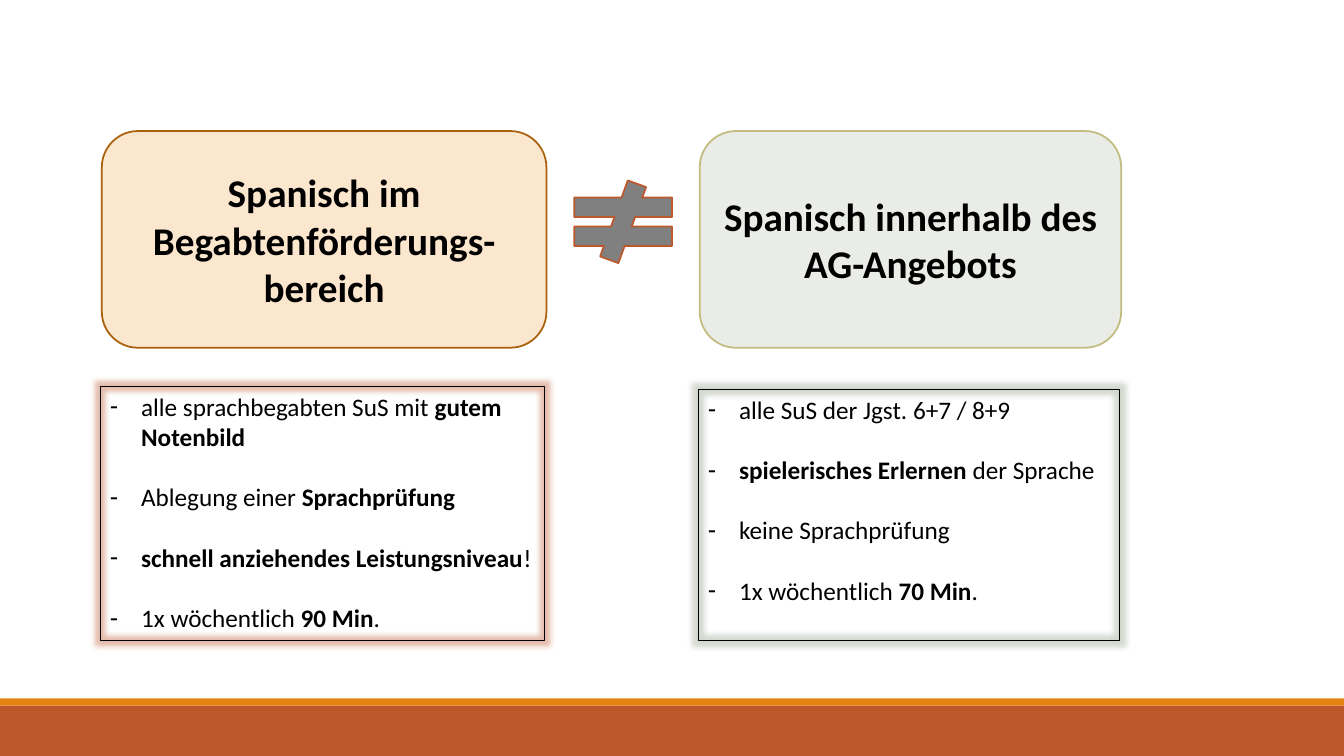
from lxml.etree import SubElement
from pptx import Presentation
from pptx.dml.color import RGBColor
from pptx.enum.shapes import MSO_SHAPE as SHP
from pptx.enum.text import MSO_ANCHOR as ANCHOR, MSO_AUTO_SIZE as AUTO, PP_ALIGN as ALIGN
from pptx.oxml.ns import qn
from pptx.util import Inches, Pt

COLORS = {
    "black": "000000", "rust": "BD582C", "orange": "E48312", "gray": "808080",
    "peach": "FBE6CE", "brown": "A9610D", "mist": "EAECE7", "olive": "C2BC80",
    "sage": "94A088",
}


class Deck:
    """Holds the style and the current slide."""

    def __init__(self, prs, font="Calibri"):
        self.font = font
        self.s = prs.slides.add_slide(prs.slide_layouts[3])
        title = self.s.shapes.title
        title.element.getparent().remove(title.element)

    def color(self, name):
        return RGBColor.from_string(COLORS[name])

    def run(self, p, text, size, bold=False):
        r = p.add_run()
        r.text = text
        r.font.name, r.font.size, r.font.bold = self.font, Pt(size), bold
        r.font.color.rgb = self.color("black")

    def shape(self, kind, box, fill, line=None):
        sp = self.s.shapes.add_shape(kind, *map(Inches, box))
        sp.shadow.inherit = False
        sp.fill.solid()
        sp.fill.fore_color.rgb = self.color(fill)
        if line:
            sp.line.color.rgb = self.color(line)
            sp.line.width = Pt(1.25)
        else:
            sp.line.fill.background()
        return sp

    def heading(self, box, text, fill, line):
        tf = self.shape(SHP.ROUNDED_RECTANGLE, box, fill, line).text_frame
        tf.word_wrap, tf.vertical_anchor = True, ANCHOR.MIDDLE
        p = tf.paragraphs[0]
        p.alignment = ALIGN.CENTER
        self.run(p, text, 28, True)

    def glow(self, sp, color):
        sp.shadow.inherit = False
        effects = sp.element.spPr.find(qn("a:effectLst"))
        glow = SubElement(effects, qn("a:glow"), rad=str(Pt(8)))
        clr = SubElement(glow, qn("a:srgbClr"), val=COLORS[color])
        SubElement(clr, qn("a:alpha"), val="40000")

    def bullets(self, idx, box, items, glow):
        sp = self.s.placeholders[idx]
        sp.left, sp.top, sp.width, sp.height = map(Inches, box)
        sp.fill.background()
        sp.line.color.rgb = self.color("black")
        sp.line.width = Pt(0.25)
        self.glow(sp, glow)
        tf = sp.text_frame
        tf.word_wrap, tf.auto_size, tf.vertical_anchor = True, AUTO.NONE, ANCHOR.TOP
        for i, item in enumerate(items):
            p = tf.add_paragraph() if i else tf.paragraphs[0]
            p.space_before = Pt(21.5 if i else 0)
            pPr = p._p.get_or_add_pPr()
            pPr.set("marL", str(Inches(0.31)))
            pPr.set("indent", str(Inches(-0.31)))
            SubElement(pPr, qn("a:buChar"), char="-")
            for text, bold in item:
                self.run(p, text, 18, bold)


def main():
    prs = Presentation()
    prs.slide_width, prs.slide_height = Inches(13.33), Inches(7.5)
    deck = Deck(prs)
    deck.shape(SHP.RECTANGLE, (0, 7, 13.33, 0.5), "rust")
    deck.shape(SHP.RECTANGLE, (0, 6.93, 13.33, 0.07), "orange")
    deck.heading((1.01, 1.3, 4.41, 2.15), "Spanisch im Begabtenförderungs-bereich",
                 "peach", "brown")
    deck.heading((6.94, 1.3, 4.18, 2.15), "Spanisch innerhalb des AG-Angebots",
                 "mist", "olive")
    deck.shape(SHP.MATH_NOT_EQUAL, (5.52, 1.79, 1.32, 0.82), "gray", "rust")
    deck.bullets(1, (0.99, 3.83, 4.41, 2.52), [
        [("alle sprachbegabten SuS mit ", False), ("gutem Notenbild", True)],
        [("Ablegung einer ", False), ("Sprachprüfung", True)],
        [("schnell anziehendes Leistungsniveau", True), ("!", False)],
        [("1x wöchentlich ", False), ("90 Min", True), (".", False)],
    ], "rust")
    deck.bullets(2, (6.92, 3.86, 4.18, 2.49), [
        [("alle SuS der Jgst. 6+7 / 8+9", False)],
        [("spielerisches Erlernen ", True), ("der Sprache", False)],
        [("keine Sprachprüfung", False)],
        [("1x wöchentlich ", False), ("70 Min", True), (".", False)],
    ], "sage")
    prs.save("out.pptx")


if __name__ == "__main__":
    main()
